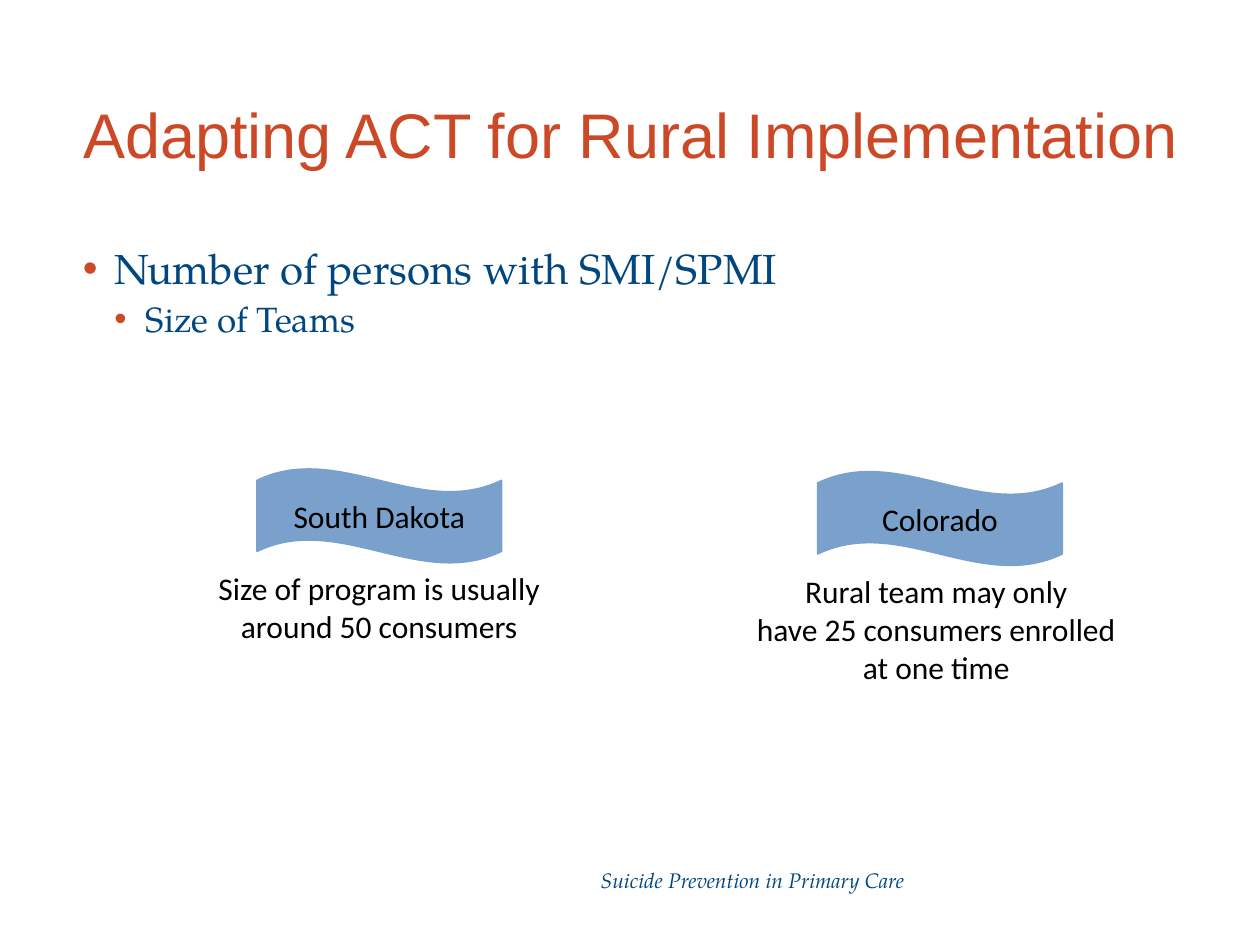
from lxml import etree
from pptx import Presentation
from pptx.dml.color import RGBColor
from pptx.enum.shapes import MSO_SHAPE
from pptx.enum.text import MSO_ANCHOR, PP_ALIGN
from pptx.oxml.ns import qn
from pptx.util import Pt

WAVE = MSO_SHAPE.WAVE
MIDDLE = MSO_ANCHOR.MIDDLE
LEFT, CENTER = PP_ALIGN.LEFT, PP_ALIGN.CENTER
ORANGE, NAVY, BLUE, BLACK = "CC4927", "00467F", "7AA1CC", "000000"
SERIF = "TeX Gyre Pagella"


def color(value):
    return RGBColor.from_string(value)


def format_text(paragraph, name, size, value, alignment=LEFT):
    paragraph.alignment = alignment
    for run in paragraph.runs:
        run.font.name = name
        run.font.size = Pt(size)
        run.font.color.rgb = color(value)


presentation = Presentation()
presentation.slide_width, presentation.slide_height = Pt(720), Pt(540)
slide = presentation.slides.add_slide(presentation.slide_layouts[5])

# Title
title = slide.shapes.title
title.left, title.top, title.width, title.height = Pt(40.3), Pt(43.9), Pt(640.8), Pt(69.8)
title.text_frame.text = "Adapting ACT for Rural Implementation"
title.text_frame.vertical_anchor = MIDDLE
paragraph = title.text_frame.paragraphs[0]
paragraph.line_spacing = 0.9
format_text(paragraph, "Arial", 36, ORANGE)

# Bulleted list
body = slide.shapes.add_textbox(Pt(40.3), Pt(138.2), Pt(640.8), Pt(321.1))
body.text_frame.word_wrap = True
body.text_frame.text = "Number of persons with SMI/SPMI\nSize of Teams"
for level, paragraph in enumerate(body.text_frame.paragraphs):
    paragraph.level = level
    paragraph.line_spacing = 0.9
    paragraph.space_before = Pt(5 * level)
    properties = paragraph._p.get_or_add_pPr()
    properties.set("marL", str(Pt(18 * (level + 1))))
    properties.set("indent", str(Pt(-18)))
    bullet_color = etree.SubElement(properties, qn("a:buClr"))
    etree.SubElement(bullet_color, qn("a:srgbClr"), val=ORANGE)
    etree.SubElement(properties, qn("a:buFont"), typeface="Arial")
    etree.SubElement(properties, qn("a:buChar"), char="•")
    format_text(paragraph, SERIF, 24 - 4 * level, NAVY)

# State banners, each with its caption below
states = [
    ("South Dakota", "Size of program is usually around 50 consumers", 146.9, 95, 267.8, 51.1),
    ("Colorado", "Rural team may only\nhave 25 consumers enrolled\nat one time",
     467.3, 413.3, 269.3, 72.7),
]
for state, text, banner_left, caption_left, top, caption_height in states:
    banner = slide.shapes.add_shape(WAVE, Pt(banner_left), Pt(top), Pt(139.7), Pt(54))
    banner.shadow.inherit = False
    banner.fill.solid()
    banner.fill.fore_color.rgb = color(BLUE)
    banner.line.color.rgb = color(BLUE)
    banner.line.width = Pt(1)
    banner.text_frame.text = state
    banner.text_frame.vertical_anchor = MIDDLE

    caption = slide.shapes.add_textbox(Pt(caption_left), Pt(top + 54), Pt(243.4), Pt(caption_height))
    caption.text_frame.word_wrap = True
    caption.text_frame.text = text
    for shape in (banner, caption):
        for paragraph in shape.text_frame.paragraphs:
            format_text(paragraph, "Calibri", 18, BLACK, CENTER)

# Footer
footer = slide.shapes.add_textbox(Pt(336.2), Pt(492.5), Pt(190.1), Pt(21.6))
footer.text_frame.word_wrap = False
footer.text_frame.text = "Suicide Prevention in Primary Care"
paragraph = footer.text_frame.paragraphs[0]
format_text(paragraph, SERIF, 12, NAVY)
paragraph.runs[0].font.italic = True

presentation.save("out.pptx")
